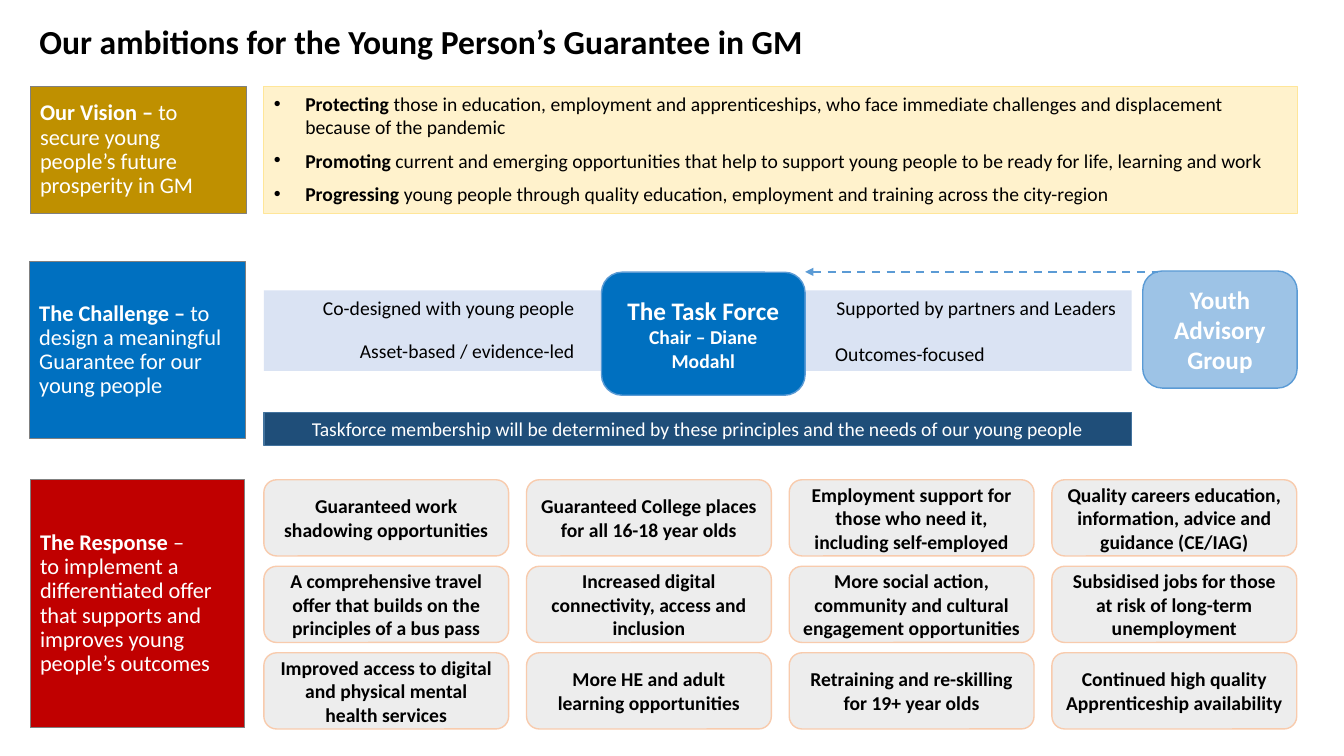
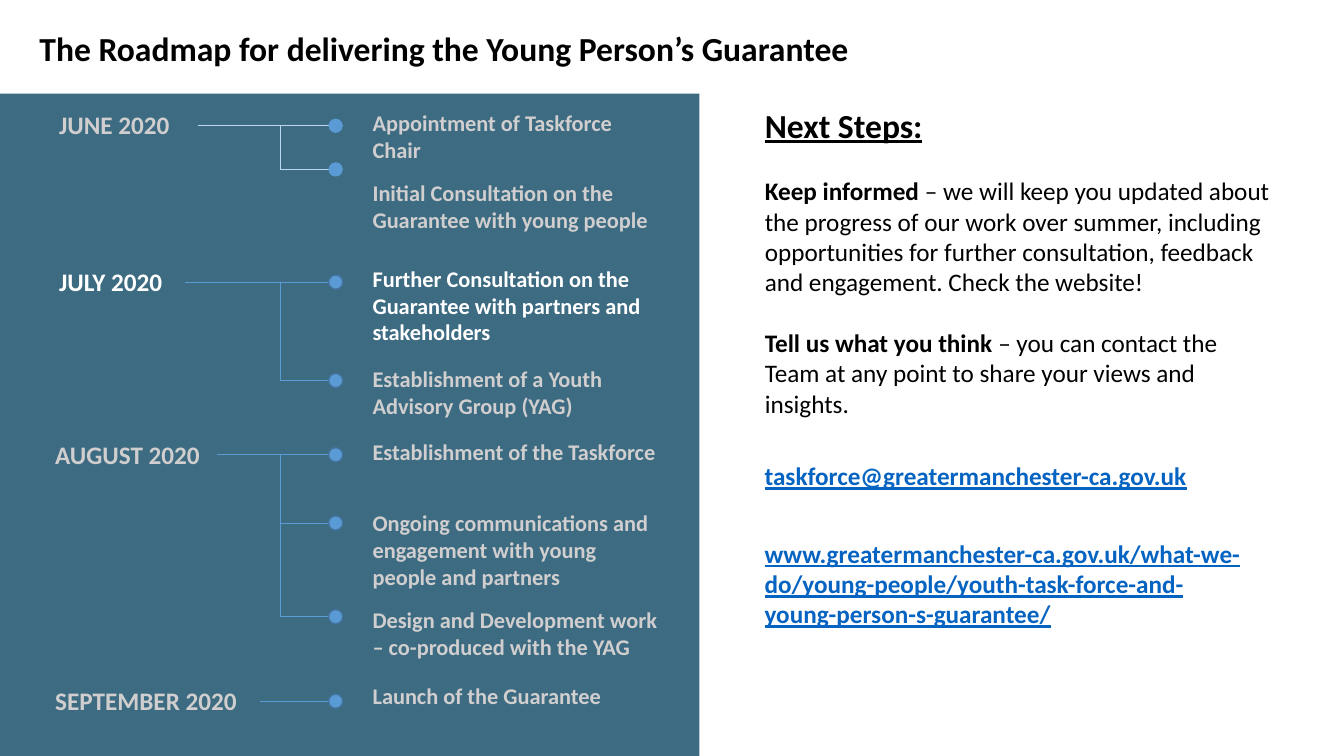
from lxml.etree import SubElement
from pptx import Presentation
from pptx.dml.color import RGBColor
from pptx.enum.dml import MSO_LINE as Dash
from pptx.enum.shapes import MSO_CONNECTOR as Link, MSO_SHAPE as Kind
from pptx.enum.text import MSO_ANCHOR as Anchor, MSO_AUTO_SIZE as Fit, PP_ALIGN as Align
from pptx.oxml.ns import qn
from pptx.util import Cm, Pt

COLOURS = {
    "black": "000000", "white": "FFFFFF", "muted": "D0CECE", "grey": "808080",
    "gold": "BF9000", "cream": "FFF2CC", "butter": "FFE699",
    "blue": "0070C0", "sky": "5B9BD5", "pale": "9DC3E6", "ice": "BDD7EE",
    "haze": "DAE3F3", "navy": "1F4E79", "steel": "43739E", "teal": "3C6B82",
    "red": "C00000", "mist": "EDEDED", "peach": "F8CBAD", "link": "0563C1",
}
BASE = {"name": "Calibri", "size": 14, "bold": False, "underline": False, "color": "black"}
BOLD = {"bold": True}


def draw(page, kind, at, fill=None, edge=None, width=1):
    place = [Cm(length) for length in at]
    if kind is None:
        return page.shapes.add_textbox(*place)
    box = page.shapes.add_shape(kind, *place)
    box.shadow.inherit = False
    box.fill.solid()
    box.fill.fore_color.rgb = RGBColor.from_string(COLOURS[fill])
    if edge:
        box.line.color.rgb = RGBColor.from_string(COLOURS[edge])
        box.line.width = Pt(width)
    else:
        box.line.fill.background()
    return box


def write(box, paras, look, align=Align.LEFT, anchor=Anchor.TOP, gaps=(), spacing=1.0):
    frame = box.text_frame
    settings = {"word_wrap": True, "auto_size": Fit.NONE, "vertical_anchor": anchor}
    for name, value in settings.items():
        setattr(frame, name, value)
    for index, spans in enumerate(paras):
        para = frame.add_paragraph() if index else frame.paragraphs[0]
        para.alignment = align
        para.line_spacing = spacing
        para.space_before = Pt(gaps[index] if gaps else 0)
        for text, changes in spans:
            if text == "\n":
                para.add_line_break()
                continue
            span = para.add_run()
            span.text = text
            values = {**BASE, **look, **changes}
            span.font.color.rgb = RGBColor.from_string(COLOURS[values.pop("color")])
            values["size"] = Pt(values["size"])
            for name, value in values.items():
                setattr(span.font, name, value)


deck = Presentation()
deck.slide_width, deck.slide_height = Cm(33.87), Cm(19.05)

titles = [
    ("Our ambitions for the Young Person’s Guarantee in GM", 0.41, (6.65, 2.18, 26.04, 3.2)),
    ("The Roadmap for delivering the Young Person’s Guarantee", 0.58, (19.02, 2.51, 13.41, 8.97)),
]
pages = []
for text, top, body_at in titles:
    page = deck.slides.add_slide(deck.slide_layouts[1])
    title, body = page.placeholders
    for holder, at in [(title, (0.74, top, 31.7, 1.27)), (body, body_at)]:
        for name, length in zip(("left", "top", "width", "height"), at):
            setattr(holder, name, Cm(length))
    write(title, [[(text, {})]], {"size": 24, "bold": True}, anchor=Anchor.MIDDLE)
    pages.append(page)
ambitions, roadmap = pages

vision = ambitions.placeholders[1]
vision.fill.solid()
vision.fill.fore_color.rgb = RGBColor.from_string(COLOURS["cream"])
vision.line.color.rgb = RGBColor.from_string(COLOURS["butter"])
vision.line.width = Pt(0.75)
write(vision, [
    [("Protecting ", BOLD), ("those in education, employment and apprenticeships, who face immediate "
                             "challenges and displacement because of the pandemic", {})],
    [("Promoting", BOLD), (" current and emerging opportunities that help to support young people "
                           "to be ready for life, learning and work", {})],
    [("Progressing ", BOLD), ("young people through quality education, employment and training "
                              "across the city-region", {})],
], {}, gaps=(0, 7, 7))
for para in vision.text_frame.paragraphs:
    layout = para._p.get_or_add_pPr()
    layout.set("marL", str(Cm(0.79)))
    layout.set("indent", str(Cm(-0.79)))

aims = [
    ((0.76, 2.18, 5.46, 3.2), "gold",
     [("Our Vision – ", BOLD), ("to secure young people’s future prosperity in GM", {})]),
    ((0.74, 6.6, 5.46, 4.45), "blue",
     [("The Challenge – ", BOLD), ("to design a meaningful Guarantee for our young people", {})]),
    ((0.76, 12.09, 5.41, 6.25), "red",
     [("The Response ", BOLD), ("–", {}), ("\n", {}),
      ("to implement a differentiated offer that supports and improves young people’s outcomes", {})]),
]
for at, fill, spans in aims:
    box = draw(ambitions, Kind.RECTANGLE, at, fill, "grey", 0.75)
    write(box, [spans], {"size": 16, "color": "white"}, anchor=Anchor.MIDDLE, gaps=(10,), spacing=0.9)

draw(ambitions, Kind.RECTANGLE, (6.65, 7.32, 21.87, 2.03), "haze")
principles = [
    ("Co-designed with young people", (6.65, 7.32, 8.08, 0.86), Align.RIGHT),
    ("Asset-based / evidence-led", (6.65, 8.41, 8.08, 0.86), Align.RIGHT),
    ("Supported by partners and Leaders", (20.83, 7.32, 10.29, 0.86), Align.LEFT),
    ("Outcomes-focused", (20.8, 8.48, 10.29, 0.86), Align.LEFT),
]
for text, at, align in principles:
    write(draw(ambitions, None, at), [[(text, {})]], {}, align)

groups = [
    (Kind.ROUNDED_RECTANGLE, (15.16, 6.86, 5.13, 3.1), "blue", "sky",
     [[("The Task Force", {"size": 18, "bold": True})], [("Chair – Diane Modahl", BOLD)]]),
    (Kind.RECTANGLE, (6.65, 10.39, 21.87, 0.84), "navy", "steel",
     [[("Taskforce membership will be determined by these principles and the needs of our young people", {})]]),
    (Kind.ROUNDED_RECTANGLE, (28.8, 6.83, 3.89, 2.95), "pale", "sky",
     [[("Youth Advisory Group", {"size": 18, "bold": True})]]),
]
for kind, at, fill, edge, paras in groups:
    box = draw(ambitions, kind, at, fill, edge)
    write(box, paras, {"color": "white"}, Align.CENTER, Anchor.MIDDLE)

offers = [
    ["Guaranteed work shadowing opportunities",
     "Guaranteed College places for all 16-18 year olds",
     "Employment support for those who need it, including self-employed",
     "Quality careers education, information, advice and guidance (CE/IAG)"],
    ["A comprehensive travel offer that builds on the principles of a bus pass",
     "Increased digital connectivity, access and inclusion",
     "More social action, community and cultural engagement opportunities",
     "Subsidised jobs for those at risk of long-term unemployment"],
    ["Improved access to digital and physical mental health services",
     "More HE and adult learning opportunities",
     "Retraining and re-skilling for 19+ year olds",
     "Continued high quality Apprenticeship availability"],
]
for row, texts in enumerate(offers):
    for column, text in enumerate(texts):
        at = (6.65 + 6.62 * column, 12.09 + 2.18 * row, 6.17, 1.92)
        box = draw(ambitions, Kind.ROUNDED_RECTANGLE, at, "mist", "peach")
        write(box, [[(text, {})]], BOLD, Align.CENTER, Anchor.MIDDLE)

draw(roadmap, Kind.RECTANGLE, (0, 2.36, 17.63, 16.69), "teal")
months = [
    ("JUNE 2020", 1.24, 2.62, 4.98, "ice", None, "muted", [
        ("Appointment of Taskforce Chair", 2.62, 3.17, "muted"),
        ("Initial Consultation on the Guarantee with young people", 4.4, 4.27, "muted")]),
    ("JULY 2020", 1.24, 6.58, 4.67, "sky", "steel", "white", [
        ("Further Consultation on the Guarantee with partners and stakeholders", 6.55, 7.11, "white"),
        ("Establishment of a Youth Advisory Group (YAG)", 9.07, 9.59, "muted")]),
    ("AUGUST 2020", 1.14, 10.95, 5.46, "sky", "steel", "muted", [
        ("Establishment of the Taskforce", 10.92, 11.46, "muted"),
        ("Ongoing communications and engagement with young people and partners", 12.71, 13.18, "muted"),
        ("Design and Development work – co-produced with the YAG", 15.16, 15.54, "muted")]),
    ("SEPTEMBER 2020", 1.14, 17.15, 6.55, "sky", "steel", "muted", [
        ("Launch of the Guarantee", 17.07, 17.67, "muted")]),
]
trunk, stop, dot = 7.06, 8.64, 0.36
links = [(ambitions, (20.29, 6.85, 29.18, 6.85), "sky", 1.5)]
dots = []
for month, left, top, start, colour, edge, ink, steps in months:
    box = draw(roadmap, None, (left, top, 5.4, 1.02))
    write(box, [[(month, {})]], {"size": 18, "bold": True, "color": ink})
    first, last = steps[0][2], steps[-1][2]
    if last > first:
        links.append((roadmap, (trunk, first, trunk, last), colour, 0.5))
    for text, text_top, middle, step_ink in steps:
        box = draw(roadmap, None, (9.14, text_top, 7.8, 2.3))
        write(box, [[(text, {})]], {"size": 16, "bold": True, "color": step_ink})
        begin = start if middle == first else trunk
        links.append((roadmap, (begin, middle, stop, middle), colour, 0.5))
        dots.append((middle, edge))

lines = []
for page, ends, colour, width in links:
    line = page.shapes.add_connector(Link.STRAIGHT, *[Cm(length) for length in ends])
    line.line.color.rgb = RGBColor.from_string(COLOURS[colour])
    line.line.width = Pt(width)
    SubElement(line._element.spPr, qn("a:effectLst"))
    lines.append(line)
arrow = lines[0].line
arrow.dash_style = Dash.DASH
SubElement(arrow._get_or_add_ln(), qn("a:headEnd"), type="triangle")

for middle, edge in dots:
    draw(roadmap, Kind.OVAL, (stop - dot, middle - dot / 2, dot, dot), "sky", edge)

news = roadmap.placeholders[1]
write(news, [
    [("Next Steps:", {"size": 24, "bold": True, "underline": True})],
    [("Keep informed ", BOLD), ("– we will keep you updated about the progress of our work over summer, "
                                "including opportunities for further consultation, feedback and "
                                "engagement. Check the website!", {})],
    [("Tell us what you think ", BOLD), ("– you can contact the Team at any point to share your views "
                                         "and insights.", {})],
], {"size": 18}, gaps=(0, 22, 22))
for para in news.text_frame.paragraphs:
    layout = para._p.get_or_add_pPr()
    layout.set("marL", "0")
    layout.set("indent", "0")
    SubElement(layout, qn("a:buNone"))

addresses = [
    ("taskforce@greatermanchester-ca.gov.uk", (19.02, 11.48, 12.85, 1.02)),
    ("www.greatermanchester-ca.gov.uk/what-we-do/young-people/youth-task-force-and-"
     "young-person-s-guarantee/", (19.02, 13.44, 12.85, 2.57)),
]
for text, at in addresses:
    look = {"size": 18, "bold": True, "underline": True, "color": "link"}
    write(draw(roadmap, None, at), [[(text, {})]], look)

deck.save("out.pptx")
